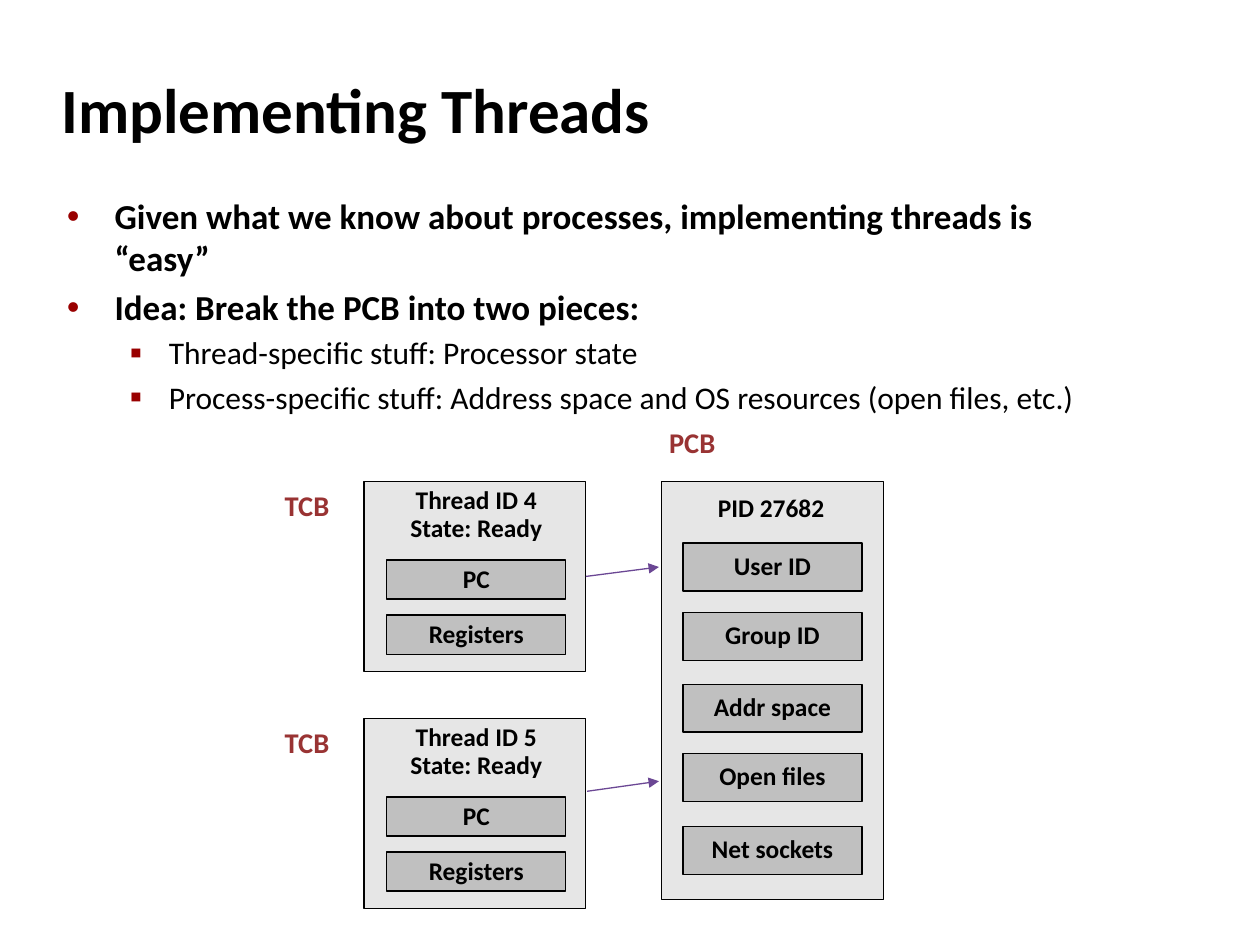
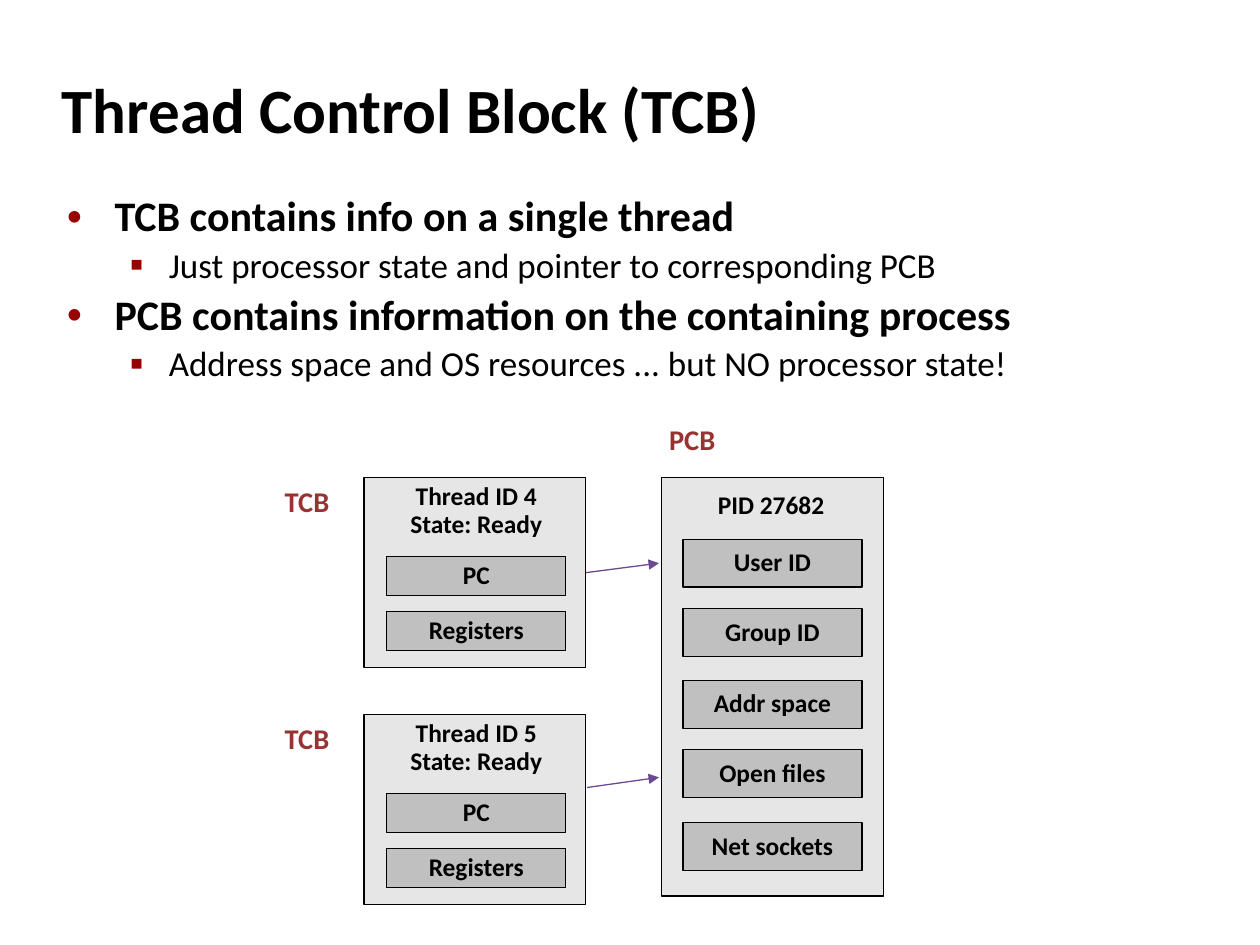
from dataclasses import dataclass

from lxml import etree
from pptx import Presentation
from pptx.dml.color import RGBColor as RGB
from pptx.enum.shapes import MSO_CONNECTOR as LINE, MSO_SHAPE as SHAPE
from pptx.enum.text import MSO_ANCHOR as ANCHOR, MSO_AUTO_SIZE as FIT, PP_ALIGN as ALIGN
from pptx.oxml.ns import qn
from pptx.util import Inches, Pt


@dataclass(frozen=True)
class Theme:
    font: str = "Calibri"
    ink: str = "000000"
    panel: str = "E6E6E6"
    field: str = "C0C0C0"
    label: str = "993333"
    arrow: str = "6B4794"
    bullet: str = "990000"
    title_size: float = 36
    label_size: float = 16.3
    field_size: float = 14.5
    line_width: float = 0.75
    leading: float = 0.93
    tight: float = 0.9


T = Theme()
WIDTH, HEIGHT = Inches(10), Inches(7.5)
CELL = WIDTH / 100

BULLETS = (
    {"char": "●", "pct": 60, "margin": 3.8, "indent": -3.8},
    {"char": "▪", "pct": 110, "margin": 8.1, "indent": -3.1},
)
THREADS = ((0, "Thread ID 4"), (18.8, "Thread ID 5"))
THREAD_FIELDS = ("PC", "Registers")
PROCESS_FIELDS = (
    (4.9, "User ID"),
    (10.4, "Group ID"),
    (16.1, "Addr space"),
    (21.6, "Open files"),
    (27.4, "Net sockets"),
)
SLIDES = (
    {
        "title": "Implementing Threads",
        "sizes": (20, 18),
        "leadings": (1, 1),
        "diagram_top": 38.2,
        "items": (
            (0, "Given what we know about processes, implementing threads is “easy”"),
            (0, "Idea: Break the PCB into two pieces:"),
            (1, "Thread-specific stuff: Processor state"),
            (1, "Process-specific stuff: Address space and OS resources (open files, etc.)"),
        ),
    },
    {
        "title": "Thread Control Block (TCB)",
        "sizes": (24, 20),
        "leadings": (T.leading, T.tight),
        "diagram_top": 37.9,
        "items": (
            (0, "TCB contains info on a single thread"),
            (1, "Just processor state and pointer to corresponding PCB"),
            (0, "PCB contains information on the containing process"),
            (1, "Address space and OS resources ... but NO processor state!"),
        ),
    },
)


def cells(*counts):
    return [round(n * CELL) for n in counts]


def assign(target, values):
    for name, value in values.items():
        setattr(target, name, value)


def place(shape, *box):
    assign(shape, dict(zip(("left", "top", "width", "height"), cells(*box))))


def write(p, text, size, color=T.ink, bold=True, **paragraph):
    r = p.add_run()
    r.text = text
    assign(r.font, {"name": T.font, "size": Pt(size), "bold": bold})
    r.font.color.rgb = RGB.from_string(color)
    assign(p, paragraph)


def write_lines(tf, lines, size, color=T.ink, align=ALIGN.CENTER):
    margins = dict.fromkeys(("margin_left", "margin_top", "margin_right", "margin_bottom"), 0)
    assign(tf, {**margins, "word_wrap": True})
    for i, line in enumerate(lines):
        p = tf.add_paragraph() if i else tf.paragraphs[0]
        write(p, line, size, color, alignment=align, line_spacing=T.tight if i else T.leading)


def set_bullet(p, char, pct, margin, indent):
    pPr = p._p.get_or_add_pPr()
    for name, value in zip(("marL", "indent"), cells(margin, indent)):
        pPr.set(name, str(value))
    color = etree.SubElement(pPr, qn("a:buClr"))
    etree.SubElement(color, qn("a:srgbClr"), val=T.bullet)
    etree.SubElement(pPr, qn("a:buSzPct"), val=str(pct * 1000))
    etree.SubElement(pPr, qn("a:buFont"), typeface=T.font)
    etree.SubElement(pPr, qn("a:buChar"), char=char)


def add_title(s, text):
    title = s.shapes.title
    place(title, 3.9, 4.8, 83, 8.3)
    tf = title.text_frame
    assign(tf, {"vertical_anchor": ANCHOR.MIDDLE, "auto_size": FIT.NONE})
    write(tf.paragraphs[0], text, T.title_size, alignment=ALIGN.LEFT, line_spacing=T.leading)


def add_list(s, items, sizes, leadings):
    body = s.placeholders[1]
    place(body, 4.3, 14.9, 86.4, 54.4)
    tf = body.text_frame
    tf.auto_size = FIT.NONE
    for i, (level, text) in enumerate(items):
        p = tf.add_paragraph() if i else tf.paragraphs[0]
        set_bullet(p, **BULLETS[level])
        write(p, text, sizes[level], bold=level == 0, level=level, line_spacing=leadings[min(i, 1)])


def add_box(shapes, box, fill, text=None):
    sp = shapes.add_shape(SHAPE.ROUNDED_RECTANGLE, *cells(*box))
    sp.adjustments[0] = 0
    sp.shadow.inherit = False
    sp.fill.solid()
    sp.fill.fore_color.rgb = RGB.from_string(fill)
    sp.line.color.rgb = RGB.from_string(T.ink)
    sp.line.width = Pt(T.line_width)
    if text:
        sp.text_frame.vertical_anchor = ANCHOR.MIDDLE
        write_lines(sp.text_frame, [text], T.field_size)
    return sp


def add_heading(shapes, left, top, *lines):
    tb = shapes.add_textbox(*cells(left, top, 15.6, 4.7))
    write_lines(tb.text_frame, lines, T.field_size)


def add_label(shapes, left, top, text):
    tb = shapes.add_textbox(*cells(left, top, 5.1, 3))
    write_lines(tb.text_frame, [text], T.label_size, T.label, ALIGN.LEFT)


def add_arrow(shapes, start, end):
    line = shapes.add_connector(LINE.STRAIGHT, *cells(*start, *end))
    line.line.color.rgb = RGB.from_string(T.arrow)
    line.line.width = Pt(T.line_width)
    etree.SubElement(line.line._get_or_add_ln(), qn("a:tailEnd"), type="triangle")
    etree.SubElement(line._element.spPr, qn("a:effectLst"))
    return line


def add_thread(shapes, top, name):
    panel = add_box(shapes, (28.9, top, 17.6, 15.1), T.panel)
    for i, field in enumerate(THREAD_FIELDS):
        add_box(shapes, (30.7, top + 6.25 + 4.37 * i, 14.2, 3.1), T.field, field)
    add_heading(shapes, 30, top + 0.45, name, "State: Ready")
    add_label(shapes, 22.6, top + 0.75, "TCB")
    return panel


def add_process(shapes, top):
    add_box(shapes, (52.5, top, 17.6, 33.2), T.panel)
    for offset, field in PROCESS_FIELDS:
        add_box(shapes, (54.2, top + offset, 14.2, 3.8), T.field, field)
    add_heading(shapes, 53.4, top + 1.1, "PID 27682")
    add_label(shapes, 53.1, top - 4.2, "PCB")


def add_diagram(s, top):
    shapes = s.shapes.add_group_shape().shapes
    panels = [add_thread(shapes, top + offset, name) for offset, name in THREADS]
    add_process(shapes, top)
    arrows = [add_arrow(shapes, (46.6, top + y), (52.3, top + y - 0.8)) for y in (7.6, 24.6)]
    arrows[0].begin_connect(panels[0], 3)


def main():
    prs = Presentation()
    assign(prs, {"slide_width": WIDTH, "slide_height": HEIGHT})
    for content in SLIDES:
        s = prs.slides.add_slide(prs.slide_layouts[1])
        add_title(s, content["title"])
        add_list(s, content["items"], content["sizes"], content["leadings"])
        add_diagram(s, content["diagram_top"])
    prs.save("out.pptx")


if __name__ == "__main__":
    main()
